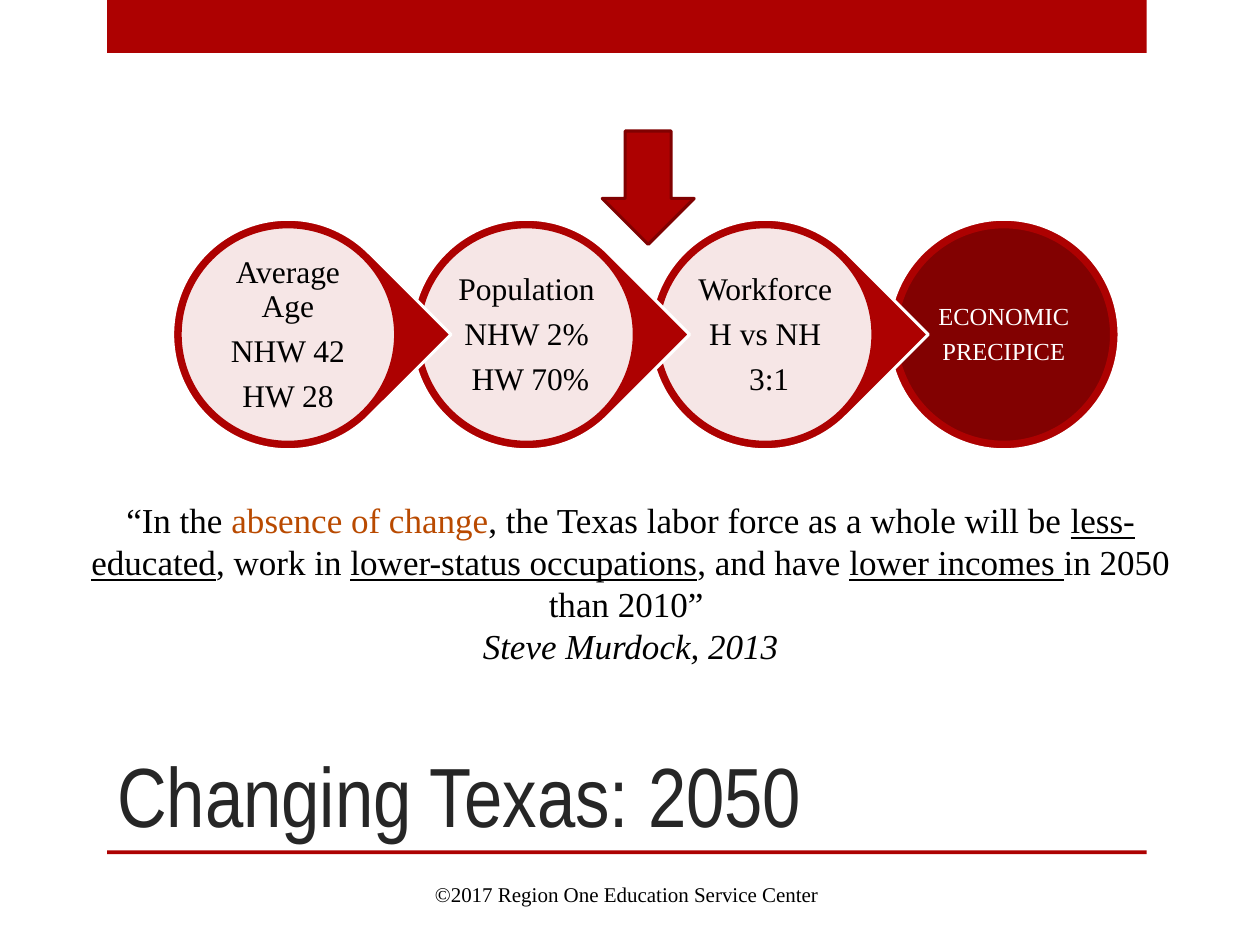
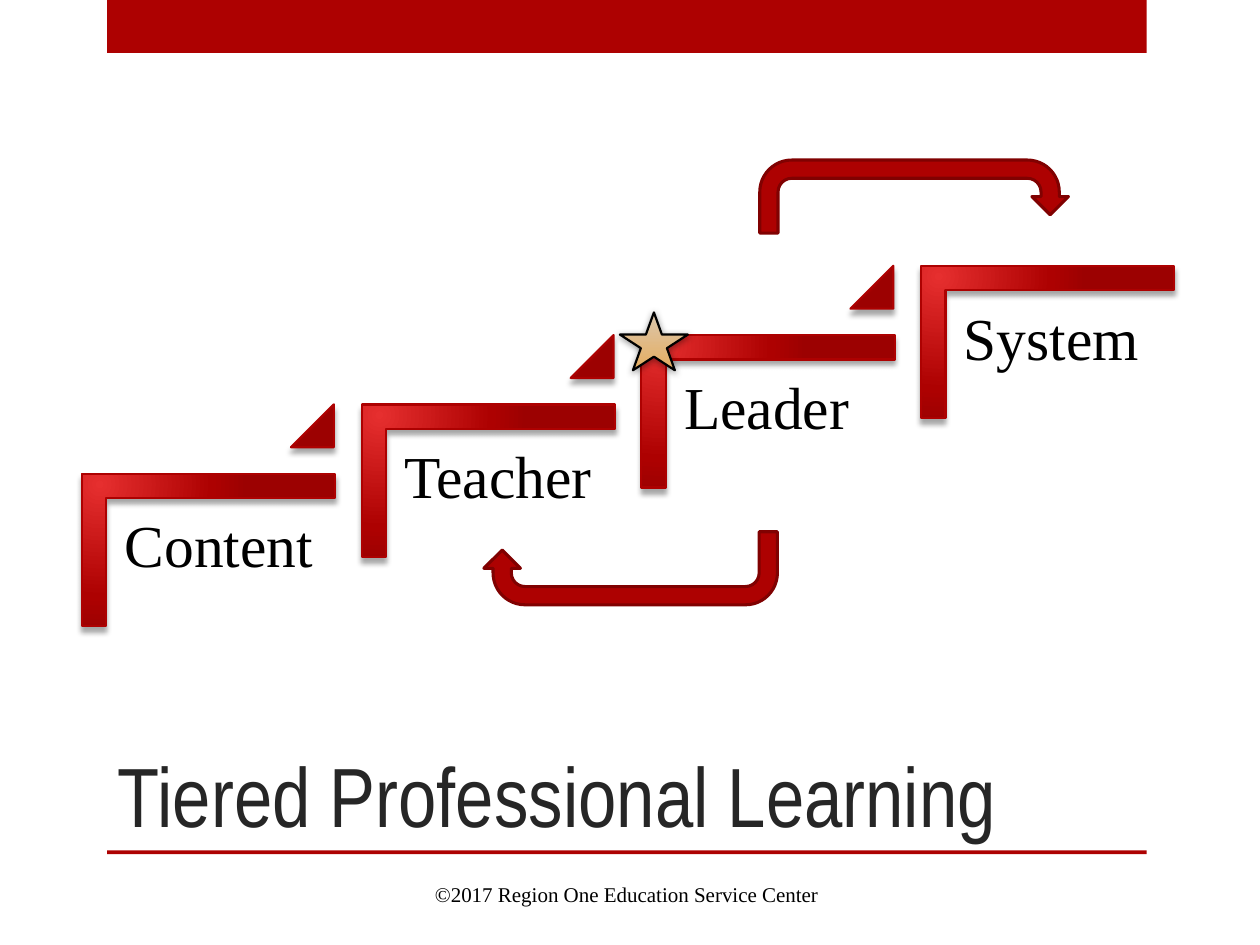
from pptx import Presentation
from pptx.dml.color import RGBColor
from pptx.enum.shapes import MSO_SHAPE
from pptx.enum.text import MSO_ANCHOR, MSO_AUTO_SIZE, PP_ALIGN
from pptx.oxml import parse_xml
from pptx.oxml.ns import nsdecls, qn
from pptx.util import Inches, Pt

RECT, OVAL, TEAR = MSO_SHAPE.RECTANGLE, MSO_SHAPE.OVAL, MSO_SHAPE.TEAR
STEP, WEDGE = MSO_SHAPE.from_xml("corner"), MSO_SHAPE.ISOSCELES_TRIANGLE
DOWN, TURN, STAR = MSO_SHAPE.DOWN_ARROW, MSO_SHAPE.U_TURN_ARROW, MSO_SHAPE.STAR_5_POINT
TOP, MIDDLE, BOTTOM = MSO_ANCHOR.TOP, MSO_ANCHOR.MIDDLE, MSO_ANCHOR.BOTTOM
LEFT, CENTER = PP_ALIGN.LEFT, PP_ALIGN.CENTER

RED, DARK, EDGE = "AD0101", "820101", "800101"
WHITE, BLACK, GREY, RUST = "FFFFFF", "000000", "262626", "B94A00"
SERIF, NARROW = "Times New Roman", "Arial Narrow"
SHINE = [(0, "E62F2F"), (76, RED), (100, "9C0101")]
ROUND = ('<a:path path="circle"><a:fillToRect l="15000" t="15000" '
         'r="100000" b="100000"/></a:path>')
SAND = [(0, "DBC7AD"), (100, "E5AD60")]
FALL = '<a:lin ang="5400000" scaled="0"/>'

color = RGBColor.from_string
deck = Presentation()
deck.slide_width, deck.slide_height = Inches(10), Inches(7.5)
col, row = deck.slide_width / 100, deck.slide_height / 75


def draw(page, kind, at, fill=None, line=None, wide=1.75, turn=0, grad=None, shade=None):
    x, y, w, h = at
    cells = [int(v) for v in (x * col, y * row, w * col, h * row)]
    if kind is None:
        return page.shapes.add_textbox(*cells)
    shape = page.shapes.add_shape(kind, *cells)
    shape.rotation = turn
    shape.shadow.inherit = False
    if fill:
        shape.fill.solid()
        shape.fill.fore_color.rgb = color(fill)
    else:
        stops, path = grad
        marks = "".join(f'<a:gs pos="{p * 1000}"><a:srgbClr val="{c}"/></a:gs>' for p, c in stops)
        shape.fill.background()
        props = shape.element.spPr
        props.replace(props.find(qn("a:noFill")), parse_xml(
            f'<a:gradFill {nsdecls("a")} rotWithShape="1"><a:gsLst>{marks}</a:gsLst>{path}</a:gradFill>'))
    if line:
        shape.line.color.rgb = color(line)
        shape.line.width = Pt(wide)
    else:
        shape.line.fill.background()
    if shade:
        alpha, blur, dist, angle = shade
        shape.element.spPr.find(qn("a:effectLst")).append(parse_xml(
            f'<a:outerShdw {nsdecls("a")} blurRad="{Pt(blur)}" dist="{Pt(dist)}" '
            f'dir="{angle * 60000}" rotWithShape="0"><a:srgbClr val="{BLACK}">'
            f'<a:alpha val="{alpha * 1000}"/></a:srgbClr></a:outerShdw>'))
    return shape


def write(box, rows, size, font=SERIF, ink=BLACK, align=CENTER, anchor=TOP,
          inset=None, tight=False):
    frame = box.text_frame
    frame.word_wrap = True
    frame.auto_size = MSO_AUTO_SIZE.NONE
    frame.vertical_anchor = anchor
    if inset is not None:
        frame.margin_left = frame.margin_right = Inches(inset)
        frame.margin_top = frame.margin_bottom = Inches(inset)
    for i, parts in enumerate(rows):
        para = frame.add_paragraph() if i else frame.paragraphs[0]
        para.alignment = align
        if tight:
            para.line_spacing = 0.9
            para.space_after = Pt(0.35 * size)
        for text, look in [(parts, {})] if isinstance(parts, str) else parts:
            run = para.add_run()
            run.text = text
            run.font.name, run.font.size = font, Pt(size)
            run.font.color.rgb = color(look.get("ink", ink))
            run.font.underline = look.get("under")
            run.font.italic = look.get("slant")


pages = []
for name, width in (("Changing Texas: 2050", 74.2), ("Tiered Professional Learning", 84.1)):
    page = deck.slides.add_slide(deck.slide_layouts[5])
    pages.append(page)
    draw(page, RECT, (8.5, 0, 82.5, 4.2), RED)
    draw(page, RECT, (8.5, 67.5, 82.5, 0.3), RED)
    title = page.shapes.title
    title.left, title.top = int(8.3 * col), int(50 * row)
    title.width, title.height = int(width * col), int(17.5 * row)
    write(title, [name], 48, NARROW, GREY, LEFT, BOTTOM)
    foot = draw(page, None, (8.7, 69, 82.1, 4))
    write(foot, ["©2017 Region One Education Service Center"], 12, anchor=MIDDLE)

trend, tiers = pages

stages = [
    ["Average Age", "NHW 42", "HW 28"],
    ["Population", "NHW 2%", " HW 70%"],
    ["Workforce", "H vs NH", " 3:1"],
    ["ECONOMIC", "PRECIPICE"],
]
for i, rows in reversed(list(enumerate(stages))):
    last = i == len(stages) - 1
    x = 13.7 + 18.94 * i
    draw(trend, OVAL if last else TEAR, (x, 17.4, 18.3, 18.3), RED, WHITE, turn=0 if last else 45)
    disc = draw(trend, OVAL, (x + 0.6, 18, 17.1, 17.1), DARK if last else WHITE, RED)
    if not last:
        tint = disc.element.spPr.find(qn("a:solidFill"))[0]
        tint.append(parse_xml(f'<a:alpha {nsdecls("a")} val="90000"/>'))
    label = draw(trend, None, (x + 3.05, 20.5, 12.2, 12.2))
    write(label, rows, 14 if last else 18, ink=WHITE if last else BLACK,
          anchor=MIDDLE, inset=0.03, tight=True)

under = {"under": True}
quote = [
    [("“In the ", {}), ("absence of change", {"ink": RUST}),
     (", the Texas labor force as a whole will be ", {}), ("less-educated", under),
     (", work in ", {}), ("lower-status occupations", under), (", and have ", {}),
     ("lower incomes ", under), ("in 2050 than 2010” ", {})],
    [("Steve Murdock, 2013", {"slant": True})],
]
write(draw(trend, None, (5.9, 39.1, 88.3, 14.5)), quote, 20)
draw(trend, DOWN, (47.8, 10.4, 7.3, 9), RED, EDGE)

gloss = {"grad": (SHINE, ROUND), "line": RED, "wide": 1.25, "shade": (35, 3, 3, 90)}
names = ["Content", "Teacher", "Leader", "System"]
for i, name in enumerate(names):
    x, y = 8.5 + 22.2 * i, 33.6 - 5.5 * i
    step = draw(tiers, STEP, (x + 2, y, 12.1, 20.1), turn=90, **gloss)
    step.adjustments[0] = step.adjustments[1] = 0.16
    write(draw(tiers, None, (x, y + 6, 18.1, 15.9)), [name], 34,
          align=LEFT, inset=0.14, tight=True)
    if i < len(names) - 1:
        wedge = draw(tiers, WEDGE, (x + 14.6, y - 1.5, 3.4, 3.4), **gloss)
        wedge.adjustments[0] = 1

draw(tiers, STAR, (49.2, 24.8, 5.4, 4.6), line=BLACK, wide=1.25,
     grad=(SAND, FALL), shade=(40, 4, 1, 88))
draw(tiers, TURN, (60.3, 12.7, 24.5, 5.8), RED, EDGE)
draw(tiers, TURN, (38.4, 42.2, 23.3, 5.8), RED, EDGE, turn=180)

deck.save("out.pptx")
